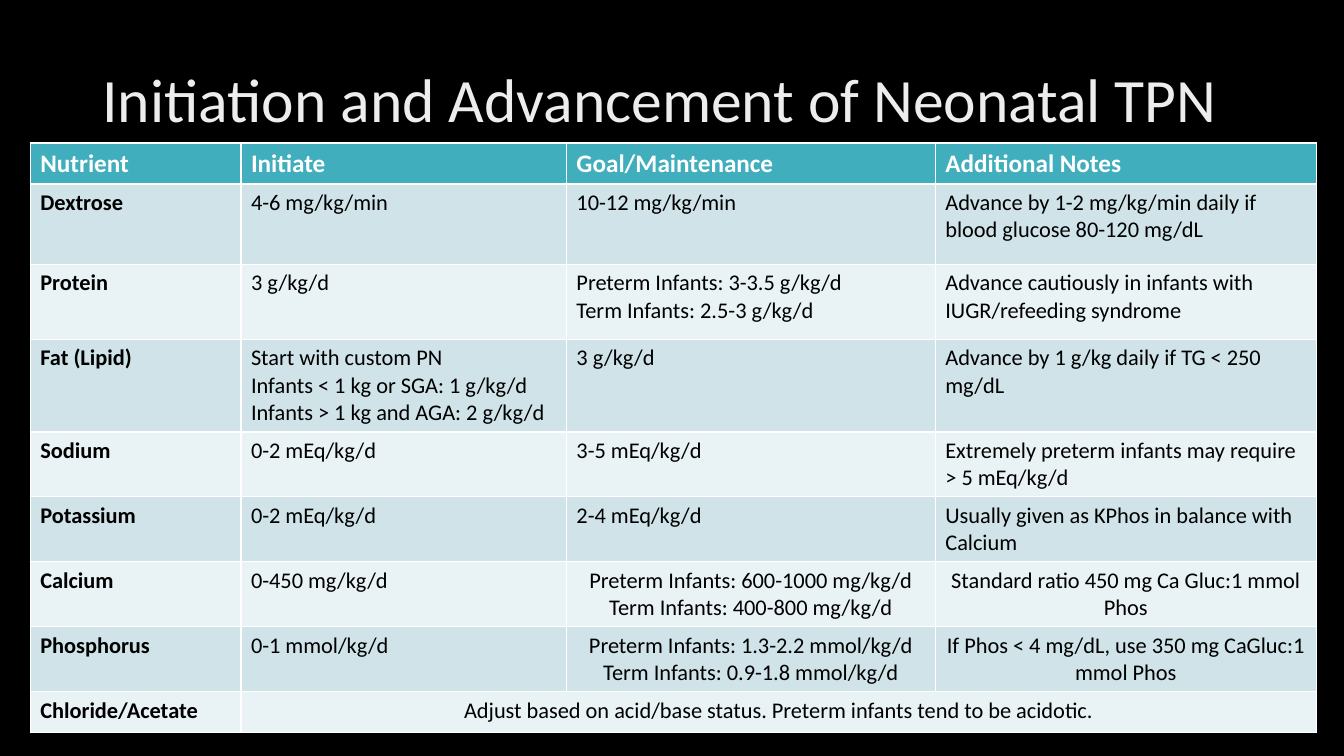
from pptx import Presentation
from pptx.dml.color import RGBColor as Rgb
from pptx.enum.text import MSO_ANCHOR as Anchor, MSO_AUTO_SIZE as Auto, PP_ALIGN as Align
from pptx.util import Pt


def paint(fill, color):
    fill.solid()
    fill.fore_color.rgb = Rgb.from_string(color)


def write(frame, text, size=16, color="000000", bold=False, align=Align.LEFT, space=1.0):
    frame.text = text
    for para in frame.paragraphs:
        para.alignment = align
        para.line_spacing = space
        for run in para.runs:
            run.font.name = "Calibri"
            run.font.size = Pt(size)
            run.font.bold = bold
            paint(run.font.fill, color)


deck = Presentation()
deck.slide_width, deck.slide_height = Pt(960), Pt(540)
slide = deck.slides.add_slide(deck.slide_layouts[5])
paint(slide.background.fill, "000000")

title = slide.shapes.title
title.left, title.top, title.width, title.height = Pt(66), Pt(21), Pt(828), Pt(104.4)
frame = title.text_frame
write(frame, "Initiation and Advancement of Neonatal TPN", size=44, color="EDEDED", space=0.9)
frame.vertical_anchor = Anchor.MIDDLE
frame.auto_size = Auto.NONE
frame.word_wrap = True

rows = [
    ("Nutrient", "Initiate", "Goal/Maintenance", "Additional Notes"),
    ("Dextrose", "4-6 mg/kg/min", "10-12 mg/kg/min",
     "Advance by 1-2 mg/kg/min daily if blood glucose 80-120 mg/dL"),
    ("Protein", "3 g/kg/d", "Preterm Infants: 3-3.5 g/kg/d\nTerm Infants: 2.5-3 g/kg/d",
     "Advance cautiously in infants with IUGR/refeeding syndrome"),
    ("Fat (Lipid)",
     "Start with custom PN\nInfants < 1 kg or SGA: 1 g/kg/d\nInfants > 1 kg and AGA: 2 g/kg/d",
     "3 g/kg/d", "Advance by 1 g/kg daily if TG < 250 mg/dL"),
    ("Sodium", "0-2 mEq/kg/d", "3-5 mEq/kg/d",
     "Extremely preterm infants may require > 5 mEq/kg/d"),
    ("Potassium", "0-2 mEq/kg/d", "2-4 mEq/kg/d",
     "Usually given as KPhos in balance with Calcium"),
    ("Calcium", "0-450 mg/kg/d",
     "Preterm Infants: 600-1000 mg/kg/d\nTerm Infants: 400-800 mg/kg/d",
     "Standard ratio 450 mg Ca Gluc:1 mmol Phos"),
    ("Phosphorus", "0-1 mmol/kg/d",
     "Preterm Infants: 1.3-2.2 mmol/kg/d\nTerm Infants: 0.9-1.8 mmol/kg/d",
     "If Phos < 4 mg/dL, use 350 mg CaGluc:1 mmol Phos"),
    ("Chloride/Acetate",
     "Adjust based on acid/base status. Preterm infants tend to be acidotic."),
]
widths = [150.5, 232.5, 263.5, 272.2]
heights = [29.2, 57.6, 53.6, 66, 46.4, 46.4, 46.4, 46.4, 29.2]
table = slide.shapes.add_table(
    len(rows), len(widths), Pt(21.6), Pt(102.2), Pt(sum(widths)), Pt(sum(heights))).table
for col, width in zip(table.columns, widths):
    col.width = Pt(width)
for row, height in zip(table.rows, heights):
    row.height = Pt(height)
last = len(rows) - 1
table.cell(last, 1).merge(table.cell(last, 3))

for r, texts in enumerate(rows):
    for c, text in enumerate(texts):
        cell = table.cell(r, c)
        if r == 0:
            paint(cell.fill, "41AEBD")
            write(cell.text_frame, text, size=18, color="FFFFFF", bold=True)
        else:
            paint(cell.fill, "CFE3E8" if r % 2 else "E9F2F4")
            mid = r == last and c == 1 or r in (6, 7) and c > 1
            write(cell.text_frame, text, bold=c == 0,
                  align=Align.CENTER if mid else Align.LEFT)

deck.save("out.pptx")
